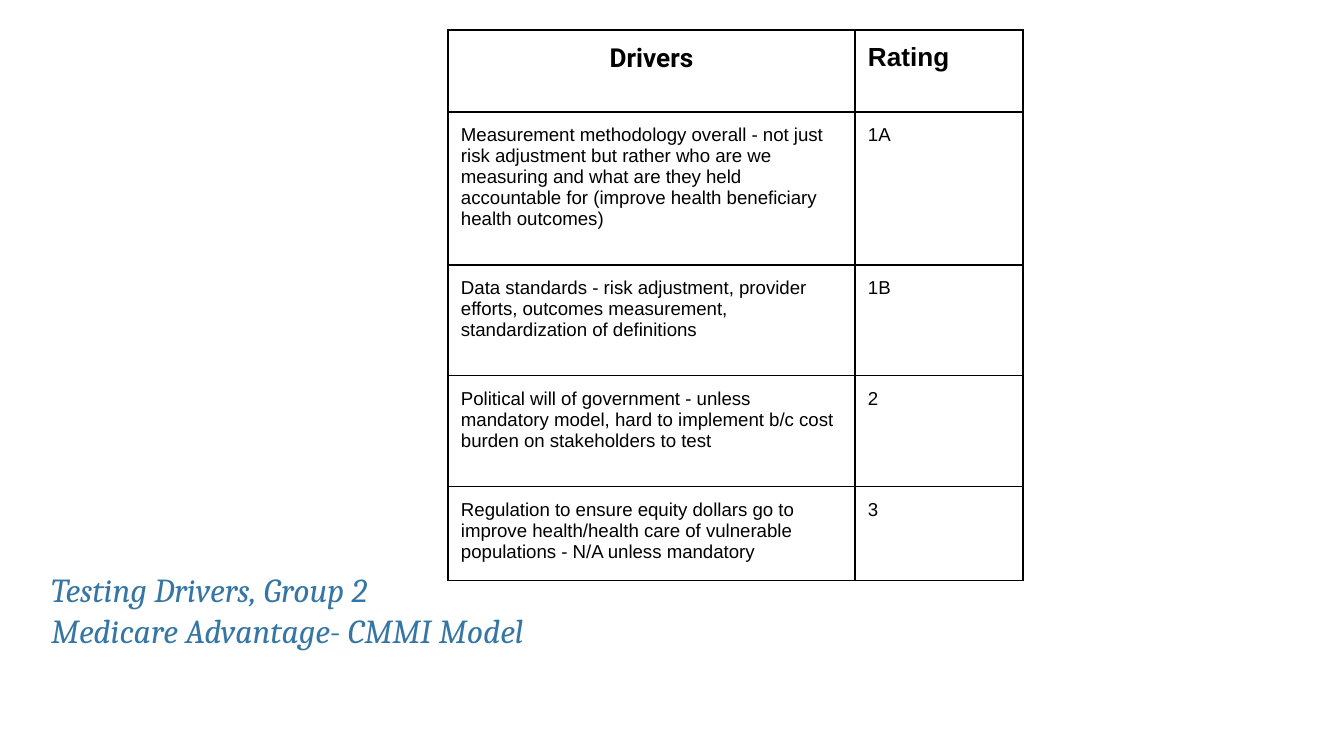
import pptx
import pptx.util
import pptx.dml.color
import pptx.enum.text
import pptx.oxml.ns
from lxml import etree

PX = 914400 / 134.4
BLACK = pptx.dml.color.RGBColor(0x00, 0x00, 0x00)
BLUE = pptx.dml.color.RGBColor(0x35, 0x76, 0xA4)
ALIGN = pptx.enum.text.PP_ALIGN
ANCHOR = pptx.enum.text.MSO_ANCHOR


def px(n):
    return pptx.util.Emu(round(n * PX))


def write(tf, text, size=10, font="Arial", color=BLACK, bold=False,
          italic=False, align=ALIGN.LEFT):
    """Fill a text frame, one paragraph per line of text."""
    tf.word_wrap = True
    for i, line in enumerate(text.split("\n")):
        p = tf.paragraphs[0] if i == 0 else tf.add_paragraph()
        p.alignment = align
        r = p.add_run()
        r.text = line
        r.font.size = pptx.util.Pt(size)
        r.font.name = font
        r.font.color.rgb = color
        r.font.bold = bold
        r.font.italic = italic


prs = pptx.Presentation()
prs.slide_width, prs.slide_height = px(1344), px(756)
s = prs.slides.add_slide(prs.slide_layouts[6])

# Title
sp = s.shapes.add_textbox(px(38), px(565), px(882), px(89))
tf = sp.text_frame
tf.margin_left = tf.margin_right = tf.margin_top = tf.margin_bottom = px(13)
tf.vertical_anchor = ANCHOR.MIDDLE
write(tf, "Testing Drivers, Group 2\nMedicare Advantage- CMMI Model",
      size=18, font="Cambria", color=BLUE, italic=True)

# Drivers table
rows = [
    ("Drivers", "Rating"),
    ("Measurement methodology overall - not just risk adjustment but rather "
     "who are we measuring and what are they held accountable for (improve "
     "health beneficiary health outcomes)", "1A"),
    ("Data standards - risk adjustment, provider efforts, outcomes "
     "measurement, standardization of definitions", "1B"),
    ("Political will of government - unless mandatory model, hard to "
     "implement b/c cost burden on stakeholders to test", "2"),
    ("Regulation to ensure equity dollars go to improve health/health care "
     "of vulnerable populations - N/A unless mandatory", "3"),
]
widths = [407, 168]
heights = [82, 153, 111, 111, 90]
table = s.shapes.add_table(len(rows), len(widths), px(448), px(30),
                           px(sum(widths)), px(sum(heights))).table
table.first_row = table.horz_banding = False
for column, width in zip(table.columns, widths):
    column.width = px(width)
for row, height in zip(table.rows, heights):
    row.height = px(height)

header_formats = [dict(size=14, font="Roboto", bold=True, align=ALIGN.CENTER),
                  dict(size=14, bold=True)]
qn = pptx.oxml.ns.qn
for i, row in enumerate(rows):
    for j, text in enumerate(row):
        cell = table.cell(i, j)
        cell.margin_left = cell.margin_right = px(13)
        cell.margin_top = cell.margin_bottom = px(13)
        cell.vertical_anchor = ANCHOR.TOP
        write(cell.text_frame, text, **(header_formats[j] if i == 0 else {}))
        tcPr = cell._tc.get_or_add_tcPr()
        for side in ("lnL", "lnR", "lnT", "lnB"):
            ln = etree.SubElement(tcPr, qn("a:" + side),
                                  w=str(pptx.util.Pt(0.75)))
            fill = etree.SubElement(ln, qn("a:solidFill"))
            etree.SubElement(fill, qn("a:srgbClr"), val=str(BLACK))
        cell.fill.background()

prs.save("out.pptx")
